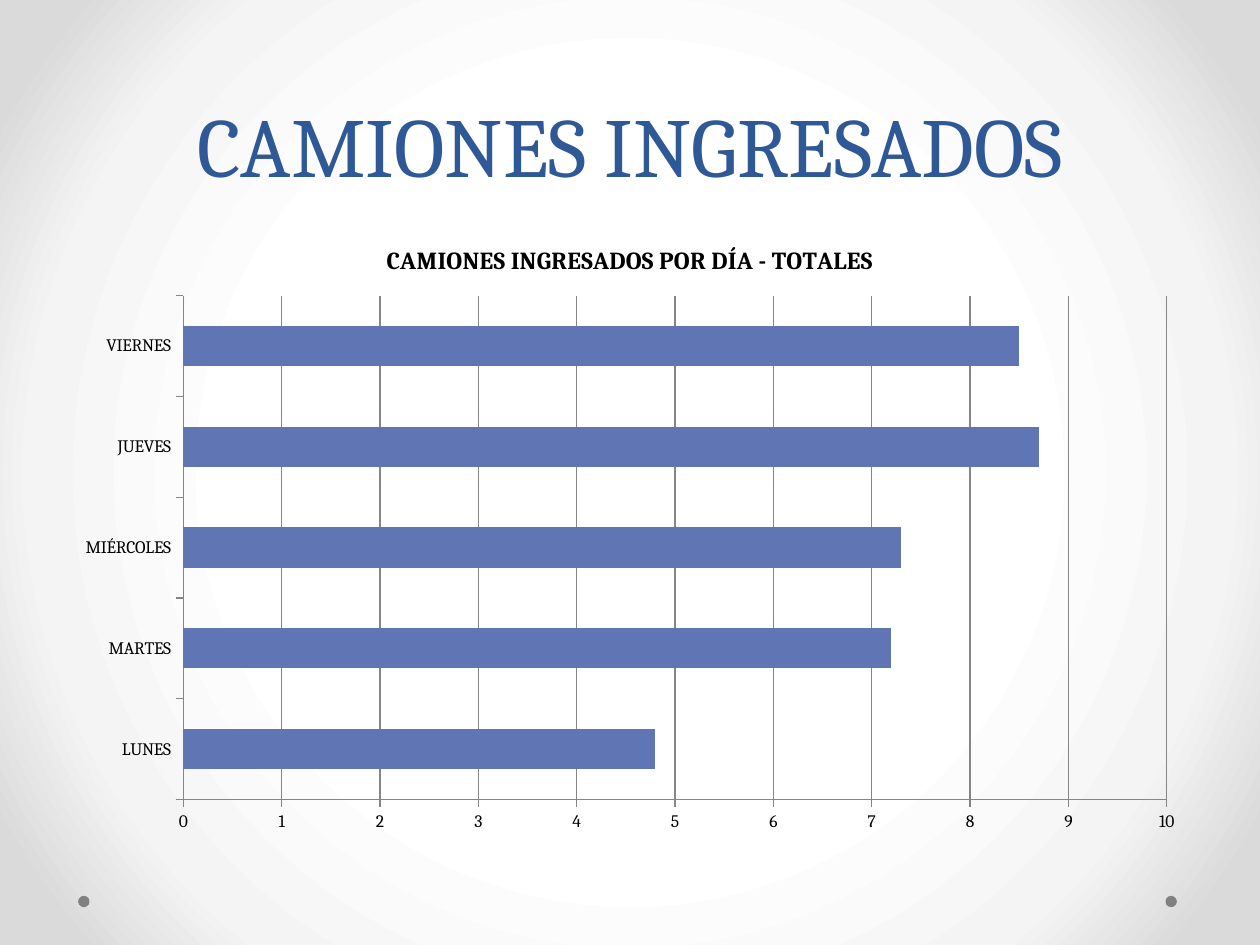
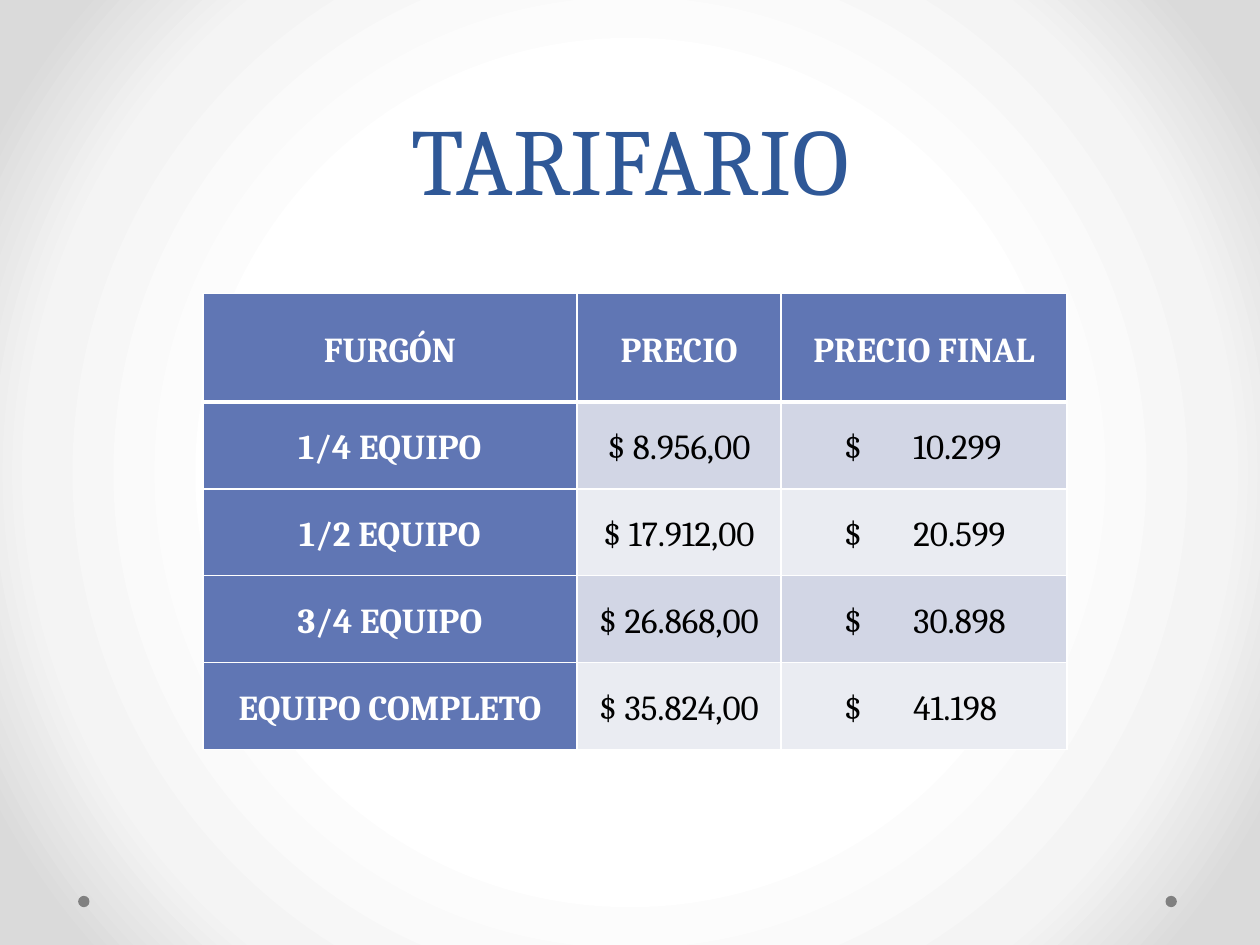
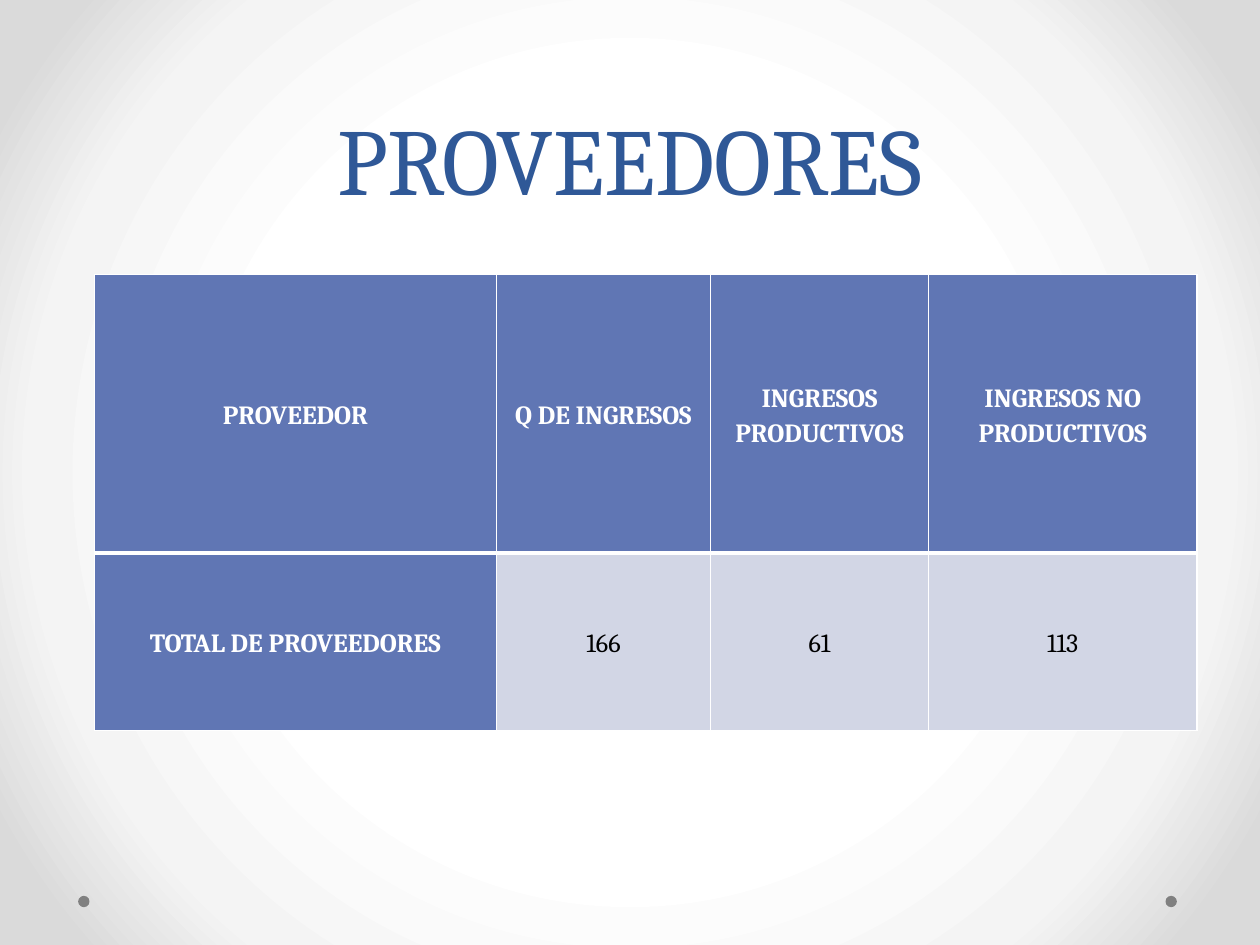
from lxml import etree
from pptx import Presentation
from pptx.chart.data import CategoryChartData
from pptx.dml.color import RGBColor
from pptx.enum.chart import XL_CHART_TYPE, XL_TICK_MARK
from pptx.enum.shapes import MSO_SHAPE
from pptx.enum.text import MSO_ANCHOR, PP_ALIGN
from pptx.oxml import parse_xml
from pptx.oxml.ns import nsdecls, qn
from pptx.util import Inches, Pt

FONT = "Cambria"
TITLE_BLUE = RGBColor(0x2F, 0x58, 0x97)
BLUE = RGBColor(0x60, 0x76, 0xB4)
BAND_DARK = RGBColor(0xD2, 0xD6, 0xE5)
BAND_LIGHT = RGBColor(0xEA, 0xEC, 0xF2)
GRAY = RGBColor(0x80, 0x80, 0x80)
GRID_GRAY = RGBColor(0x86, 0x86, 0x86)
WHITE = RGBColor(0xFF, 0xFF, 0xFF)
BLACK = RGBColor(0, 0, 0)
BACKGROUND_STOPS = [(50, WHITE), (76, RGBColor(0xF4, 0xF4, 0xF4)), (92, RGBColor(0xDA, 0xDA, 0xDA))]


def set_background(master):
    """Give every slide the radial white-to-gray gradient."""
    fill = master.background.fill
    fill.solid()
    stops = "".join(
        f'<a:gs pos="{pos * 1000}"><a:srgbClr val="{color}"/></a:gs>' for pos, color in BACKGROUND_STOPS
    )
    gradient = parse_xml(
        f'<a:gradFill {nsdecls("a")} rotWithShape="1"><a:gsLst>{stops}</a:gsLst><a:path path="circle">'
        '<a:fillToRect l="50000" t="50000" r="50000" b="50000"/></a:path></a:gradFill>'
    )
    solid = next(master.element.iter(qn("a:solidFill")))
    solid.getparent().replace(solid, gradient)


def add_dot(s, left):
    dot = s.shapes.add_shape(MSO_SHAPE.OVAL, Inches(left), Inches(7.11), Inches(0.09), Inches(0.09))
    dot.shadow.inherit = False
    dot.fill.solid()
    dot.fill.fore_color.rgb = GRAY
    dot.line.fill.background()


def set_font(font, size, color, bold=False):
    font.name = FONT
    font.size = Pt(size)
    font.color.rgb = color
    font.bold = bold


def add_title_slide(prs, title, size=54, top=0, height=1.75):
    """Add a slide with its two footer dots and its title."""
    s = prs.slides.add_slide(prs.slide_layouts[6])
    for left in (9.25, 0.62):
        add_dot(s, left)
    tf = s.shapes.add_textbox(Inches(0.5), Inches(top), Inches(9), Inches(height)).text_frame
    tf.word_wrap = True
    tf.vertical_anchor = MSO_ANCHOR.BOTTOM
    p = tf.paragraphs[0]
    p.text = title
    p.alignment = PP_ALIGN.CENTER
    p.line_spacing = Pt(58)
    set_font(p.font, size, TITLE_BLUE)
    return s


def add_bar_chart(s, title, values):
    data = CategoryChartData(number_format="0.0")
    data.categories = list(values)
    data.add_series("Series 1", list(values.values()))
    chart = s.shapes.add_chart(
        XL_CHART_TYPE.BAR_CLUSTERED, Inches(0.5), Inches(1.75), Inches(9), Inches(4.95), data
    ).chart
    set_font(chart.font, 10, BLACK)
    chart.has_legend = False
    chart.has_title = True
    p = chart.chart_title.text_frame.paragraphs[0]
    p.text = title
    set_font(p.font, 14, BLACK, bold=True)

    plot = chart.plots[0]
    plot.gap_width = 150
    plot.vary_by_categories = False
    bars = plot.series[0].format.fill
    bars.solid()
    bars.fore_color.rgb = BLUE

    axis = chart.value_axis
    axis.minimum_scale, axis.maximum_scale, axis.major_unit = 0, 10, 1
    axis.tick_labels.number_format = "0"
    axis.tick_labels.number_format_is_linked = False
    axis.has_major_gridlines = True
    for line in (axis.major_gridlines.format.line, axis.format.line, chart.category_axis.format.line):
        line.color.rgb = GRID_GRAY
        line.width = Pt(0.75)
    for ax in (axis, chart.category_axis):
        ax.major_tick_mark = XL_TICK_MARK.OUTSIDE
        ax.minor_tick_mark = XL_TICK_MARK.NONE


def set_borders(cell, top, bottom):
    """Draw white borders: 1 pt at the sides, the given widths above and below."""
    tc_pr = cell._tc.get_or_add_tcPr()
    for i, (side, width) in enumerate((("L", 1), ("R", 1), ("T", top), ("B", bottom))):
        ln = etree.Element(qn(f"a:ln{side}"), w=str(Pt(width)))
        fill = etree.SubElement(ln, qn("a:solidFill"))
        etree.SubElement(fill, qn("a:srgbClr"), val=str(WHITE))
        tc_pr.insert(i, ln)


def fill_cell(cell, text, size, row, col):
    heading = row == 0 or col == 0
    cell.margin_left = cell.margin_right = Inches(0.05)
    cell.margin_top = cell.margin_bottom = 0
    cell.vertical_anchor = MSO_ANCHOR.MIDDLE
    cell.fill.solid()
    cell.fill.fore_color.rgb = BLUE if heading else BAND_DARK if row % 2 else BAND_LIGHT
    set_borders(cell, top=3 if row == 1 else 1, bottom=3 if row == 0 else 1)
    p = cell.text_frame.paragraphs[0]
    p.text = text
    p.line_spacing = 1.15
    set_font(p.font, size, WHITE if heading else BLACK, bold=heading)
    if "\t" in text:
        # A hanging indent sets the amount apart from its currency sign.
        p.alignment = PP_ALIGN.LEFT
        p_pr = p._p.get_or_add_pPr()
        p_pr.set("marL", str(Inches(1)))
        p_pr.set("indent", str(Inches(-0.55)))
    else:
        p.alignment = PP_ALIGN.CENTER


def add_table(s, left, top, widths, heights, rows, size):
    table = s.shapes.add_table(
        len(heights), len(widths), Inches(left), Inches(top), Inches(sum(widths)), Inches(sum(heights))
    ).table
    for column, width in zip(table.columns, widths):
        column.width = Inches(width)
    for table_row, height in zip(table.rows, heights):
        table_row.height = Inches(height)
    for i, row in enumerate(rows):
        for j, text in enumerate(row):
            fill_cell(table.cell(i, j), text, size, i, j)


def main():
    prs = Presentation()
    prs.slide_width, prs.slide_height = Inches(10), Inches(7.5)
    set_background(prs.slide_master)

    s = add_title_slide(prs, "CAMIONES INGRESADOS", size=48, top=0.52, height=1.07)
    trucks = {"LUNES": 4.8, "MARTES": 7.2, "MIÉRCOLES": 7.3, "JUEVES": 8.7, "VIERNES": 8.5}
    add_bar_chart(s, "CAMIONES INGRESADOS POR DÍA - TOTALES", trucks)

    s = add_title_slide(prs, "TARIFARIO")
    rates = [
        ("FURGÓN", "PRECIO", "PRECIO FINAL"),
        ("1/4 EQUIPO", "$ 8.956,00", "$\t10.299"),
        ("1/2 EQUIPO", "$ 17.912,00", "$\t20.599"),
        ("3/4 EQUIPO", "$ 26.868,00", "$\t30.898"),
        ("EQUIPO COMPLETO", "$ 35.824,00", "$\t41.198"),
    ]
    add_table(s, 1.61, 2.33, [2.97, 1.62, 2.27], [0.86] + [0.69] * 4, rates, size=20)

    s = add_title_slide(prs, "PROVEEDORES")
    suppliers = [
        ("PROVEEDOR", "Q DE INGRESOS", "INGRESOS PRODUCTIVOS", "INGRESOS NO PRODUCTIVOS"),
        ("TOTAL DE PROVEEDORES", "166", "61", "113"),
    ]
    add_table(s, 0.75, 2.18, [3.19, 1.7, 1.73, 2.13], [2.21, 1.41], suppliers, size=15)

    prs.save("out.pptx")


if __name__ == "__main__":
    main()
